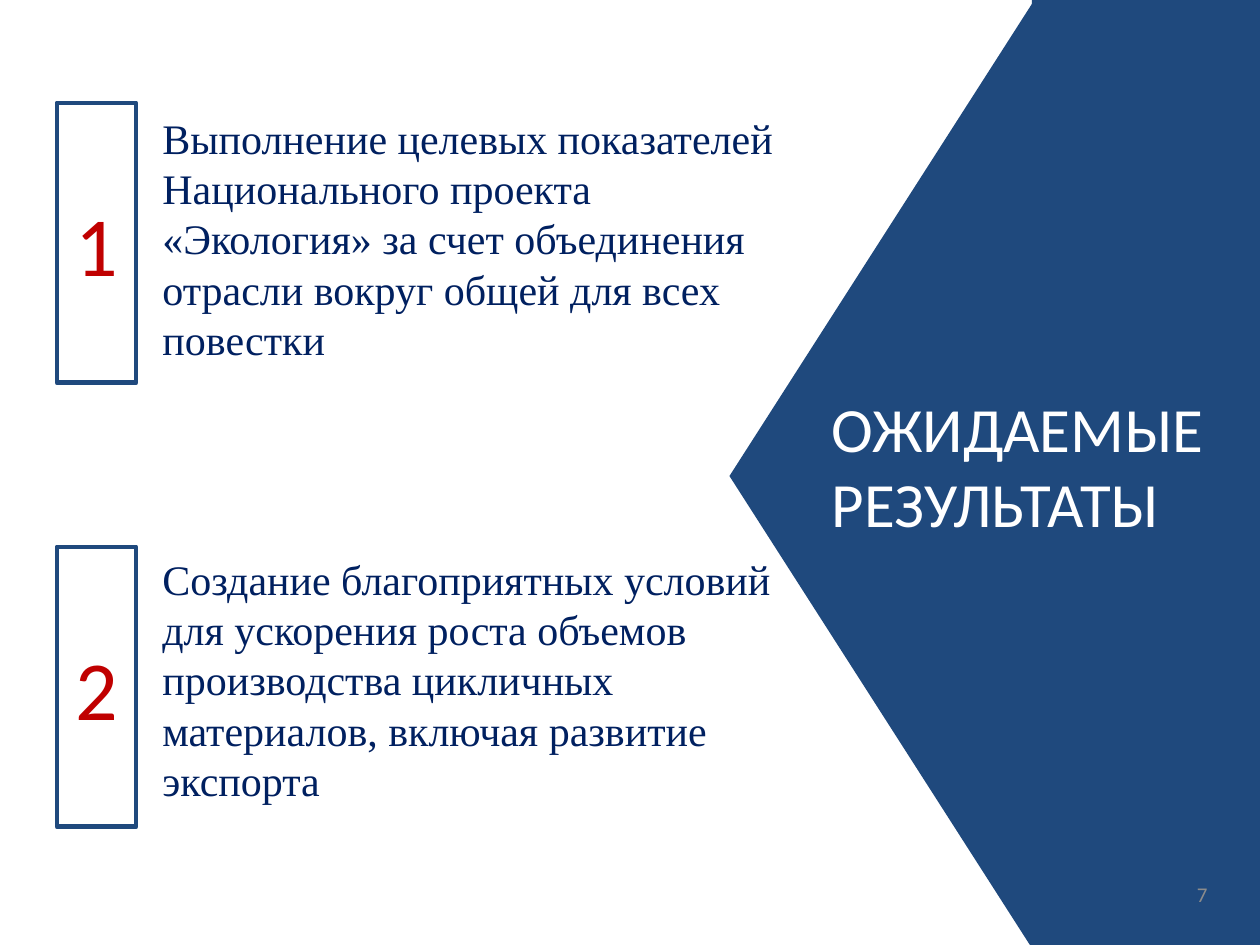
"""Builds the expected results slide with two numbered statements."""
from pptx import Presentation
from pptx.dml.color import RGBColor
from pptx.enum.shapes import MSO_SHAPE
from pptx.enum.text import MSO_ANCHOR, MSO_AUTO_SIZE, PP_ALIGN
from pptx.util import Inches, Pt

PX = Inches(1) / 126
RECT, TRIANGLE = MSO_SHAPE.RECTANGLE, MSO_SHAPE.ISOSCELES_TRIANGLE
TOP, MIDDLE = MSO_ANCHOR.TOP, MSO_ANCHOR.MIDDLE
LEFT, CENTER, RIGHT = PP_ALIGN.LEFT, PP_ALIGN.CENTER, PP_ALIGN.RIGHT
NAVY = "1F497D"


def rgb(value):
    return RGBColor.from_string(value)


def write(sp, text, size, color, font="Calibri", align=LEFT, anchor=TOP):
    tf = sp.text_frame
    tf.word_wrap = True
    tf.auto_size = MSO_AUTO_SIZE.NONE
    tf.vertical_anchor = anchor
    p = tf.paragraphs[0]
    p.text = text
    p.alignment = align
    p.font.size = Pt(size)
    p.font.name = font
    p.font.color.rgb = rgb(color)


prs = Presentation()
prs.slide_width, prs.slide_height = Inches(10), Inches(7.5)
s = prs.slides.add_slide(prs.slide_layouts[5])

for kind, box, angle in [
    (TRIANGLE, (407, 324, 949, 304), 270),
    (RECT, (1032, 0, 228, 945), 0),
]:
    sp = s.shapes.add_shape(kind, *[int(v * PX) for v in box])
    sp.rotation = angle
    sp.shadow.inherit = False
    sp.fill.solid()
    sp.fill.fore_color.rgb = rgb(NAVY)
    sp.line.fill.background()

title = s.shapes.title
title.left, title.top, title.width, title.height = [int(v * PX) for v in (819, 383, 417, 165)]
write(title, "ОЖИДАЕМЫЕ РЕЗУЛЬТАТЫ", 36, "FFFFFF")
title.element.getparent().append(title.element)

sp = s.shapes.add_textbox(*[int(v * PX) for v in (828, 869, 392, 50)])
write(sp, "7", 12, "8C8C8C", align=RIGHT, anchor=MIDDLE)

results = [
    (103, 106, 639, "Выполнение целевых показателей Национального проекта «Экология» "
     "за счет объединения отрасли вокруг общей для всех повестки"),
    (547, 547, 665, "Создание благоприятных условий для ускорения роста объемов "
     "производства цикличных материалов, включая развитие экспорта"),
]
for number, (box_top, text_top, width, text) in enumerate(results, 1):
    sp = s.shapes.add_textbox(*[int(v * PX) for v in (150, text_top, width, 267)])
    write(sp, text, 24, "002060", font="Times New Roman")
    sp = s.shapes.add_shape(RECT, *[int(v * PX) for v in (57, box_top, 79, 280)])
    sp.shadow.inherit = False
    sp.fill.background()
    sp.line.color.rgb = rgb(NAVY)
    sp.line.width = Pt(2.75)
    write(sp, str(number), 48, "C00000", align=CENTER, anchor=MIDDLE)

prs.save("out.pptx")
